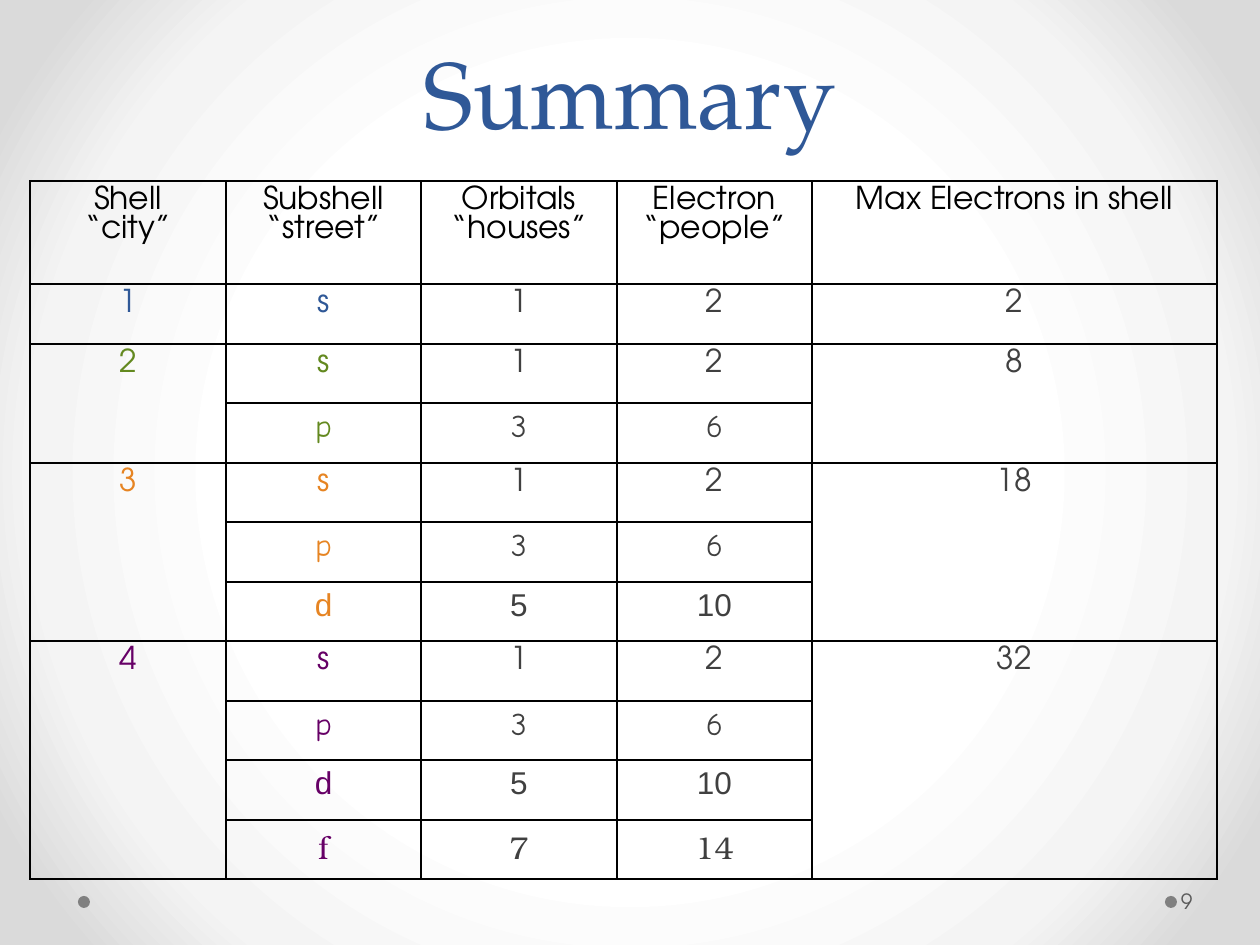
"""Build the summary slide of electron shells, subshells and orbitals."""
from lxml.etree import SubElement
from pptx import Presentation
from pptx.dml.color import RGBColor
from pptx.enum.shapes import MSO_SHAPE
from pptx.enum.text import MSO_ANCHOR, PP_ALIGN
from pptx.oxml import parse_xml
from pptx.oxml.ns import nsdecls, qn
from pptx.util import Emu, Pt

HUES = {"title": "2F5897", "head": "000000", "text": "404040", "dot": "808080",
        "page": "595959", "line": "000000"}
SHELLS = {"1": "2F5897", "2": "63891F", "3": "E68422", "4": "660066"}
SANS = "TeX Gyre Adventor"
FACES = {"s": SANS, "p": "Comic Neue", "d": "Arial", "f": "TeX Gyre Bonum"}
HEADS = [("Shell", "“city”"), ("Subshell", "“street”"), ("Orbitals", "“houses”"),
         ("Electron", "“people”"), ("Max Electrons in shell",)]
STOPS = [(50, "FFFFFF"), (76, "F4F4F4"), (92, "DADADA")]


def px(num):
    return Emu(round(num * 914400 / 126))


def write(para, text, size, face, hue, align=PP_ALIGN.CENTER):
    para.alignment = align
    run = para.add_run()
    run.text = text
    run.font.size = Pt(size)
    run.font.name = face
    run.font.color.rgb = RGBColor.from_string(hue)


deck = Presentation()
deck.slide_width, deck.slide_height = px(1260), px(945)
slide = deck.slides.add_slide(deck.slide_layouts[5])

stops = "".join(f'<a:gs pos="{pos * 1000}"><a:srgbClr val="{hue}"/></a:gs>'
                for pos, hue in STOPS)
back = parse_xml(
    f'<p:bg {nsdecls("p", "a")}><p:bgPr><a:gradFill rotWithShape="1"><a:gsLst>{stops}</a:gsLst>'
    '<a:path path="circle"><a:fillToRect l="50000" t="50000" r="50000" b="50000"/></a:path>'
    '</a:gradFill><a:effectLst/></p:bgPr></p:bg>')
slide.element.cSld.insert(0, back)

for left in (1165, 78):
    dot = slide.shapes.add_shape(MSO_SHAPE.OVAL, px(left), px(896), px(12), px(12))
    dot.shadow.inherit = False
    dot.fill.solid()
    dot.fill.fore_color.rgb = RGBColor.from_string(HUES["dot"])
    dot.line.fill.background()

title = slide.shapes.title
title.left, title.top, title.width, title.height = px(63), px(4), px(1134), px(151)
title.text_frame.vertical_anchor = MSO_ANCHOR.BOTTOM
para = title.text_frame.paragraphs[0]
write(para, "Summary", 54, "TeX Gyre Pagella", HUES["title"])
para.line_spacing = Pt(58)

table = slide.shapes.add_table(11, 5, px(30), px(181), px(1187), px(698)).table
table.first_row = table.horz_banding = False
for col, width in zip(table.columns, (196, 195, 196, 195, 405)):
    col.width = px(width)
for num, row in enumerate(table.rows):
    row.height = px(103 if num == 0 else 59 + num % 2)

for cell in table.iter_cells():
    props = cell._tc.get_or_add_tcPr()
    for side in ("lnL", "lnR", "lnT", "lnB"):
        line = SubElement(props, qn(f"a:{side}"), w=str(Pt(1)))
        fill = SubElement(line, qn("a:solidFill"))
        SubElement(fill, qn("a:srgbClr"), val=HUES["line"])
    cell.fill.background()

for col, lines in enumerate(HEADS):
    cell = table.cell(0, col)
    cell.margin_top = px(5)
    frame = cell.text_frame
    for num, text in enumerate(lines):
        para = frame.add_paragraph() if num else frame.paragraphs[0]
        write(para, text, 18, SANS, HUES["head"])

top = 1
for shell, hue in SHELLS.items():
    count = int(shell)
    for col, text, tint in ((0, shell, hue), (4, str(2 * count ** 2), HUES["text"])):
        cell = table.cell(top, col)
        cell.margin_top = px(5)
        if count > 1:
            cell.merge(table.cell(top + count - 1, col))
        write(cell.text_frame.paragraphs[0], text, 18, SANS, tint)
    for step, name in enumerate("spdf"[:count]):
        homes = 2 * step + 1
        items = ((name, hue), (str(homes), HUES["text"]), (str(2 * homes), HUES["text"]))
        for col, (text, tint) in enumerate(items, 1):
            cell = table.cell(top + step, col)
            cell.margin_top = px(5 if name == "s" else 6)
            write(cell.text_frame.paragraphs[0], text, 18, FACES[name], tint)
    top += count

page = slide.shapes.add_textbox(px(1177), px(876), px(77), px(50)).text_frame
page.word_wrap = True
page.vertical_anchor = MSO_ANCHOR.MIDDLE
page.margin_left = px(4)
page.margin_top = page.margin_right = page.margin_bottom = px(6)
write(page.paragraphs[0], "9", 12, SANS, HUES["page"], PP_ALIGN.LEFT)

deck.save("out.pptx")
